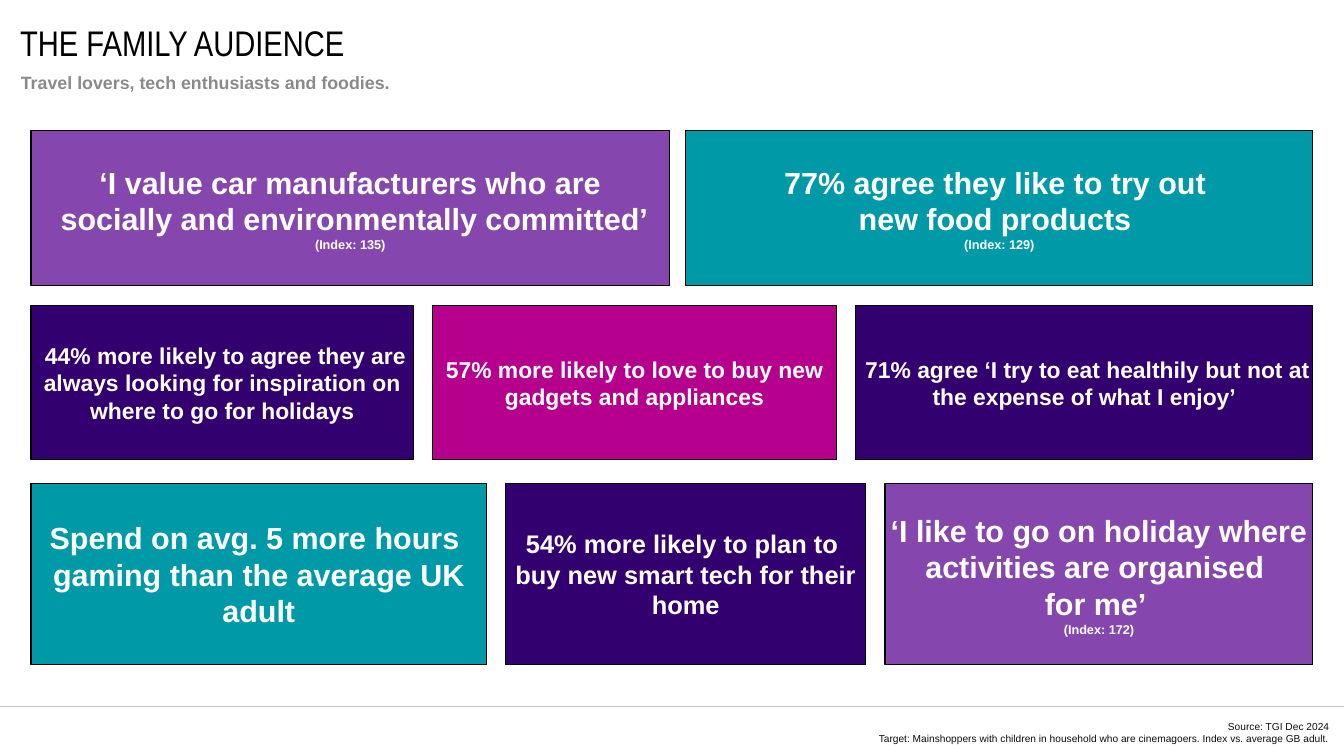
from lxml import etree
from pptx import Presentation
from pptx.dml.color import RGBColor
from pptx.enum.shapes import MSO_CONNECTOR as Connector, MSO_SHAPE as Shape
from pptx.enum.text import MSO_ANCHOR as Anchor, MSO_AUTO_SIZE as AutoSize, PP_ALIGN as Align
from pptx.oxml.ns import qn
from pptx.util import Emu, Pt

WHITE = RGBColor(0xFF, 0xFF, 0xFF)
BLACK = RGBColor(0x00, 0x00, 0x00)
SOURCE_INK = RGBColor(0x0D, 0x0D, 0x0D)
GREY = RGBColor(0x8A, 0x8A, 0x8D)
RULE_GREY = RGBColor(0xCA, 0xC8, 0xC8)
PURPLE = RGBColor(0x85, 0x47, 0xAD)
INDIGO = RGBColor(0x33, 0x00, 0x6F)
TEAL = RGBColor(0x00, 0x99, 0xA8)
MAGENTA = RGBColor(0xB6, 0x00, 0x8D)

SLIDE_W, SLIDE_H = 1470, 827
CARDS_LEFT = 34

# Each row: top, height, gap, cards as (width, fill, [(text, size), ...])
CARD_ROWS = [
    (143, 169, 18, [
        (698, PURPLE, [("‘I value car manufacturers who are", 24),
                       (" socially and environmentally committed’", 24),
                       ("(Index: 135)", 10)]),
        (686, TEAL, [("77% agree they like to try out ", 24),
                     ("new food products ", 24),
                     ("(Index: 129)", 10)]),
    ]),
    (334, 169, 21, [
        (418, INDIGO, [(" 44% more likely to agree they are always looking for "
                        "inspiration on where to go for holidays", 18)]),
        (442, MAGENTA, [("57% more likely to love to buy new gadgets and appliances", 18)]),
        (500, INDIGO, [(" 71% agree ‘I try to eat healthily but not at the expense "
                        "of what I enjoy’", 18)]),
    ]),
    (529, 198, 21, [
        (498, TEAL, [("Spend on avg. 5 more hours ", 24),
                     ("gaming than the average UK adult", 24)]),
        (394, INDIGO, [("54% more likely to plan to ", 20),
                       ("buy new smart tech for their home", 20)]),
        (468, PURPLE, [("‘I like to go on holiday where activities are organised ", 24),
                       ("for me’ ", 24),
                       ("(Index: 172)", 10)]),
    ]),
]


def px(length):
    """100 px to the inch."""
    return Emu(length * 9144)


def place(part, left, top, width, height):
    part.left, part.top, part.width, part.height = map(px, (left, top, width, height))


def prepare_frame(frame, anchor):
    frame.margin_left = frame.margin_right = frame.margin_top = frame.margin_bottom = 0
    frame.word_wrap = True
    frame.auto_size = AutoSize.NONE
    frame.vertical_anchor = anchor


def write_lines(frame, lines, color, align, bold=False, face="Arial"):
    for index, (text, size) in enumerate(lines):
        paragraph = frame.add_paragraph() if index else frame.paragraphs[0]
        paragraph.alignment = align
        paragraph.space_before = Pt(0)
        run = paragraph.add_run()
        run.text = text
        run.font.name, run.font.size, run.font.bold = face, Pt(size), bold
        run.font.color.rgb = color


def add_heading(slide, left, top, width):
    title = slide.shapes.title
    place(title, left, top, width, 45)
    prepare_frame(title.text_frame, Anchor.MIDDLE)
    write_lines(title.text_frame, [("THE FAMILY AUDIENCE", 28)], BLACK, Align.LEFT,
                face="Arial Narrow")

    subtitle = slide.shapes.add_textbox(px(left - 9), px(top + 47), px(1423), px(48))
    subtitle.text_frame.word_wrap = True
    write_lines(subtitle.text_frame, [("Travel lovers, tech enthusiasts and foodies.", 14)],
                GREY, Align.LEFT, bold=True)
    subtitle.text_frame.paragraphs[0].line_spacing = Pt(19)


def add_card(slide, left, top, width, height, fill, lines):
    card = slide.shapes.add_shape(Shape.RECTANGLE, px(left), px(top), px(width), px(height))
    card.shadow.inherit = False
    card.fill.solid()
    card.fill.fore_color.rgb = fill
    card.line.color.rgb = BLACK
    card.line.width = Pt(1)
    prepare_frame(card.text_frame, Anchor.MIDDLE)
    write_lines(card.text_frame, lines, WHITE, Align.CENTER, bold=True)


def add_card_row(slide, left, top, height, gap, cards):
    for width, fill, lines in cards:
        add_card(slide, left, top, width, height, fill, lines)
        left += width + gap


def add_footer(slide, top):
    rule = slide.shapes.add_connector(Connector.STRAIGHT, 0, px(top), px(SLIDE_W), px(top))
    rule.line.color.rgb = RULE_GREY
    rule.line.width = Pt(0.5)
    etree.SubElement(rule._element.spPr, qn("a:effectLst"))

    source = slide.placeholders[1]
    place(source, 836, top + 15, 618, 40)
    prepare_frame(source.text_frame, Anchor.TOP)
    write_lines(source.text_frame, [
        ("Source: TGI Dec 2024", 8),
        ("Target: Mainshoppers with children in household who are cinemagoers. "
         "Index vs. average GB adult.", 8),
    ], SOURCE_INK, Align.RIGHT)
    for paragraph in source.text_frame.paragraphs:
        properties = paragraph._p.get_or_add_pPr()
        properties.set("marL", "0")
        properties.set("indent", "0")
        etree.SubElement(properties, qn("a:buNone"))


def main():
    deck = Presentation()
    deck.slide_width, deck.slide_height = px(SLIDE_W), px(SLIDE_H)
    slide = deck.slides.add_slide(deck.slide_layouts[1])

    add_heading(slide, 22, 24, 1018)
    for top, height, gap, cards in CARD_ROWS:
        add_card_row(slide, CARDS_LEFT, top, height, gap, cards)
    add_footer(slide, 773)

    deck.save("out.pptx")


if __name__ == "__main__":
    main()
